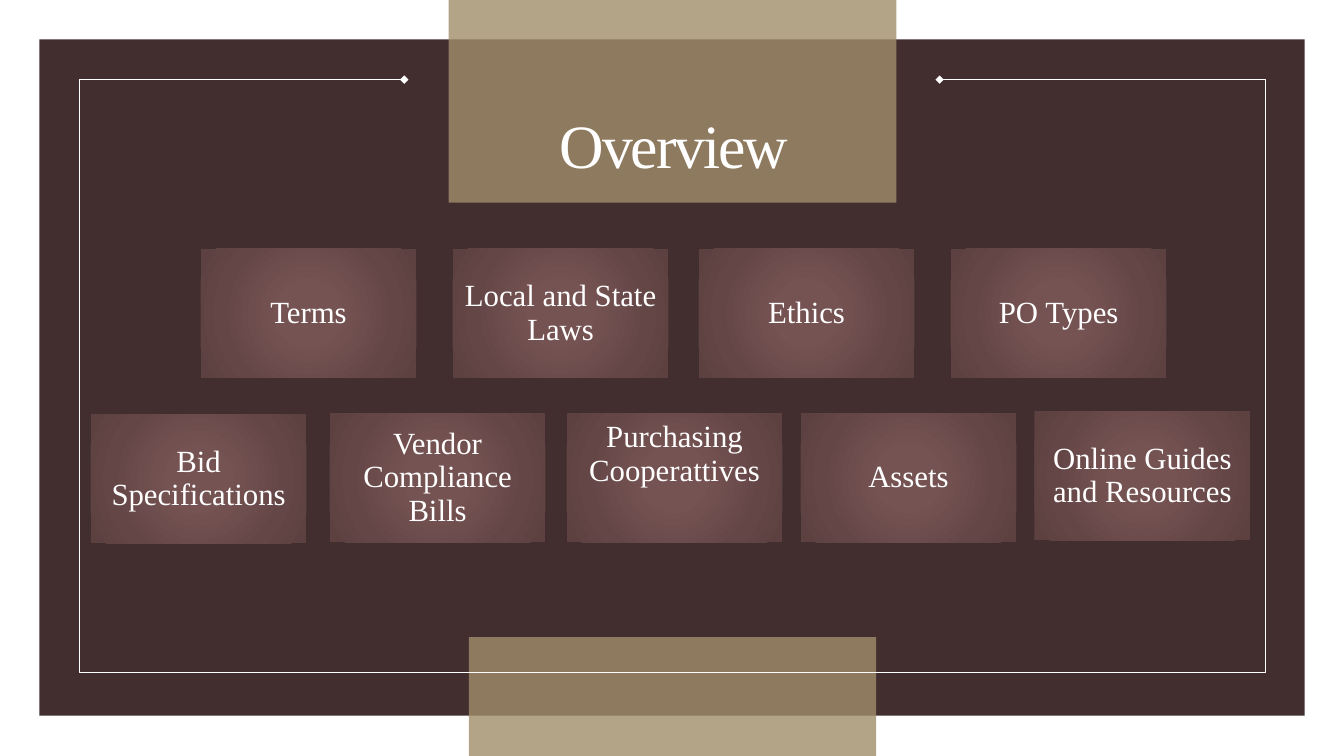
"""Build the Overview slide: a framed panel with nine topic tiles."""
import pptx
import pptx.util
import pptx.dml.color
import pptx.enum.shapes
import pptx.enum.text
import pptx.oxml
import pptx.oxml.ns

PX = 9144
FONT = "Times New Roman"
RECT = pptx.enum.shapes.MSO_SHAPE.RECTANGLE
ANCHOR = pptx.enum.text.MSO_ANCHOR
NS = pptx.oxml.ns.nsdecls("a")


def rgb(value):
    return pptx.dml.color.RGBColor.from_string(value)


def write(s, text, size, anchor, insets):
    tf = s.text_frame
    frame = dict(zip(("margin_left", "margin_top", "margin_right", "margin_bottom"),
                     (n * PX for n in insets)))
    frame.update(word_wrap=True, vertical_anchor=anchor)
    for name, value in frame.items():
        setattr(tf, name, value)
    p = tf.paragraphs[0]
    for name, value in {"alignment": pptx.enum.text.PP_ALIGN.CENTER, "line_spacing": 0.9}.items():
        setattr(p, name, value)
    r = p.add_run()
    r.text = text
    for name, value in {"name": FONT, "size": pptx.util.Pt(size)}.items():
        setattr(r.font, name, value)
    r.font.color.rgb = rgb("FFFFFF")
    return r


prs = pptx.Presentation()
prs.slide_width, prs.slide_height = 1333 * PX, 750 * PX
sp = prs.slides.add_slide(prs.slide_layouts[6]).shapes

blocks = [
    ((39, 39, 1255, 671), "422E2E", 100),
    ((445, 0, 444, 201), "A28E6A", 80),
    ((465, 632, 404, 118), "A28E6A", 80),
]
for box, color, alpha in blocks:
    s = sp.add_shape(RECT, *(n * PX for n in box))
    s.shadow.inherit = False
    s.fill.solid()
    s.fill.fore_color.rgb = rgb(color)
    s.line.fill.background()
    if alpha < 100:
        clr = s.fill._xPr.find(".//" + pptx.oxml.ns.qn("a:srgbClr"))
        clr.append(pptx.oxml.parse_xml(f'<a:alpha {NS} val="{alpha * 1000}"/>'))

fb = sp.build_freeform(932, 79, scale=PX)
fb.add_line_segments([(1255, 79), (1255, 667), (79, 667), (79, 79), (401, 79)], close=False)
s = fb.convert_to_shape()
s.shadow.inherit = False
s.fill.background()
s.line.color.rgb = rgb("FFFFFF")
s.line.width = pptx.util.Pt(1)
for end in ("headEnd", "tailEnd"):
    s.line._get_or_add_ln().append(pptx.oxml.parse_xml(f'<a:{end} {NS} type="diamond"/>'))

title = sp.add_textbox(*(n * PX for n in (449, 39, 439, 146)))
r = write(title, "Overview", 44, ANCHOR.BOTTOM, (10, 5, 10, 5))
r._r.get_or_add_rPr().set("spc", "-150")

stops = "".join(f'<a:gs pos="{pos * 1000}"><a:srgbClr val="{color}"/></a:gs>'
                for pos, color in ((0, "765353"), (23, "765353"), (69, "644646"), (97, "5D4141")))
gradient = (f'<a:gradFill {NS} rotWithShape="1"><a:gsLst>{stops}</a:gsLst><a:path path="circle">'
            '<a:fillToRect l="50000" t="50000" r="50000" b="50000"/></a:path></a:gradFill>')

tiles = [
    (199, 247, "Terms", 9),
    (449, 247, "Local and State Laws", 9),
    (693, 247, "Ethics", 9),
    (943, 247, "PO Types", 9),
    (90, 411, "Bid Specifications", 9),
    (327, 410, "Vendor Compliance Bills", 9),
    (562, 410, "Purchasing Cooperattives", 55),
    (794, 410, "Assets", 9),
    (1026, 408, "Online Guides and Resources", 9),
]
for x, y, text, bottom in tiles:
    s = sp.add_shape(RECT, x * PX, y * PX, 214 * PX, 128 * PX)
    s.shadow.inherit = False
    s.line.fill.background()
    s.fill.gradient()
    grad = s.fill._xPr.find(pptx.oxml.ns.qn("a:gradFill"))
    grad.getparent().replace(grad, pptx.oxml.parse_xml(gradient))
    write(s, text, 22, ANCHOR.MIDDLE, (9, 9, 9, bottom))

prs.save("out.pptx")
